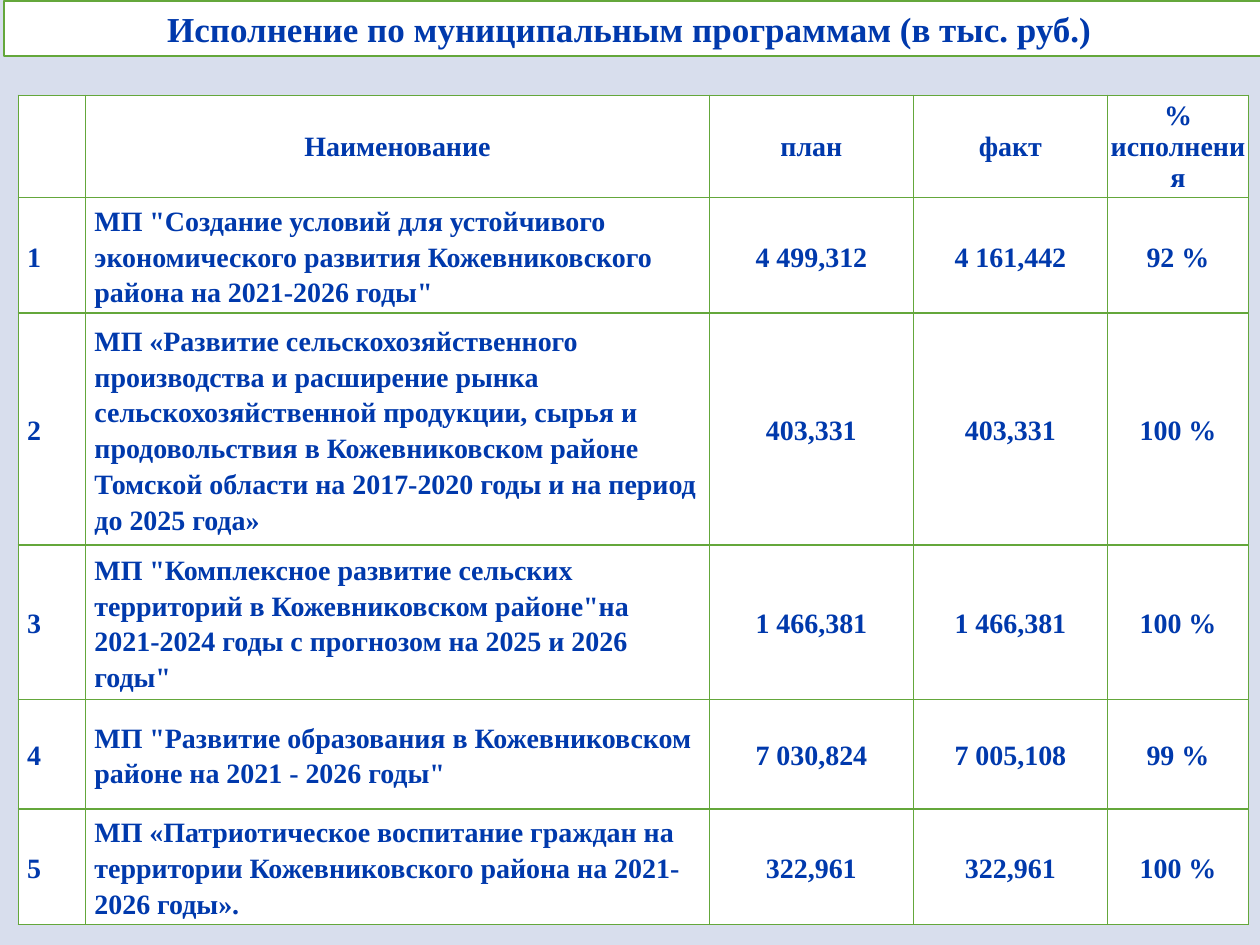
from dataclasses import dataclass

from lxml.etree import SubElement
from pptx import Presentation
from pptx.dml.color import RGBColor
from pptx.enum.shapes import MSO_SHAPE as Shape
from pptx.enum.text import MSO_ANCHOR as Anchor, MSO_AUTO_SIZE as AutoSize, PP_ALIGN as Align
from pptx.oxml.ns import qn
from pptx.util import Pt

COLORS = {"background": "D8DEED", "panel": "FFFFFF", "border": "64A73B", "text": "0039AC"}
FONT = "Times New Roman"
COLUMN_WIDTHS = [38.5, 356.4, 116.5, 111, 80.6]
HEADER_HEIGHT = 58.3
HEADERS = ["", "Наименование", "план", "факт", "% исполнения"]


@dataclass
class Program:
    name: str
    plan: str
    fact: str
    percent: str
    height: float


PROGRAMS = [
    Program('МП "Создание условий для устойчивого экономического развития '
            'Кожевниковского района на 2021-2026 годы"',
            "4 499,312", "4 161,442", "92 %", 66.2),
    Program("МП «Развитие сельскохозяйственного производства и расширение рынка "
            "сельскохозяйственной продукции, сырья и продовольствия в Кожевниковском "
            "районе Томской области на 2017-2020 годы и на период до 2025 года»",
            "403,331", "403,331", "100 %", 132.2),
    Program('МП "Комплексное развитие сельских территорий в Кожевниковском районе"на '
            '2021-2024 годы с прогнозом на 2025 и 2026 годы"',
            "1 466,381", "1 466,381", "100 %", 88.4),
    Program('МП "Развитие образования в Кожевниковском районе на 2021 - 2026 годы"',
            "7 030,824", "7 005,108", "99 %", 62.5),
    Program("МП «Патриотическое воспитание граждан на территории Кожевниковского "
            "района на 2021-2026 годы».",
            "322,961", "322,961", "100 %", 66.2),
]


def color(name: str) -> RGBColor:
    return RGBColor.from_string(COLORS[name])


def paint(fill, name: str) -> None:
    fill.solid()
    fill.fore_color.rgb = color(name)


def write(para, text: str, size: float, align) -> None:
    para.alignment = align
    span = para.add_run()
    span.text = text
    span.font.name = FONT
    span.font.size = Pt(size)
    span.font.bold = True
    span.font.color.rgb = color("text")


def add_borders(cell) -> None:
    properties = cell._tc.get_or_add_tcPr()
    for side in ("a:lnL", "a:lnR", "a:lnT", "a:lnB"):
        line = SubElement(properties, qn(side), w=str(Pt(1)))
        fill = SubElement(line, qn("a:solidFill"))
        SubElement(fill, qn("a:srgbClr"), val=COLORS["border"])


def fill_cell(cell, text: str, align, is_header: bool) -> None:
    add_borders(cell)
    paint(cell.fill, "panel")
    cell.vertical_anchor = Anchor.MIDDLE
    cell.margin_left = cell.margin_right = Pt(0.7 if is_header else 5)
    cell.margin_top = Pt(0.7 if is_header else 0)
    cell.margin_bottom = Pt(0)
    if text:
        para = cell.text_frame.paragraphs[0]
        write(para, text, 16, align)
        if not is_header:
            para.line_spacing = 1.15


def add_title(slide) -> None:
    box = slide.shapes.add_shape(Shape.RECTANGLE, Pt(2.2), Pt(0.5), Pt(720), Pt(31.5))
    box.shadow.inherit = False
    paint(box.fill, "panel")
    box.line.color.rgb = color("border")
    box.line.width = Pt(1.25)
    frame = box.text_frame
    frame.word_wrap = True
    frame.auto_size = AutoSize.SHAPE_TO_FIT_TEXT
    write(frame.paragraphs[0], "Исполнение по муниципальным программам (в тыс. руб.) ",
          20, Align.CENTER)


def add_program_table(slide) -> None:
    rows = [HEADERS] + [[str(number), item.name, item.plan, item.fact, item.percent]
                        for number, item in enumerate(PROGRAMS, 1)]
    heights = [HEADER_HEIGHT] + [item.height for item in PROGRAMS]
    table = slide.shapes.add_table(len(rows), len(HEADERS), Pt(10.5), Pt(54.5),
                                   Pt(sum(COLUMN_WIDTHS)), Pt(sum(heights))).table
    table.first_row = table.horz_banding = False
    for column, width in zip(table.columns, COLUMN_WIDTHS):
        column.width = Pt(width)
    for row_index, (texts, height) in enumerate(zip(rows, heights)):
        table.rows[row_index].height = Pt(height)
        is_header = row_index == 0
        for column_index, text in enumerate(texts):
            align = Align.CENTER if is_header or column_index > 1 else Align.LEFT
            fill_cell(table.cell(row_index, column_index), text, align, is_header)


def main() -> None:
    deck = Presentation()
    deck.slide_width, deck.slide_height = Pt(720), Pt(540)
    page = deck.slides.add_slide(deck.slide_layouts[6])
    paint(page.background.fill, "background")
    add_title(page)
    add_program_table(page)
    deck.save("out.pptx")


if __name__ == "__main__":
    main()
